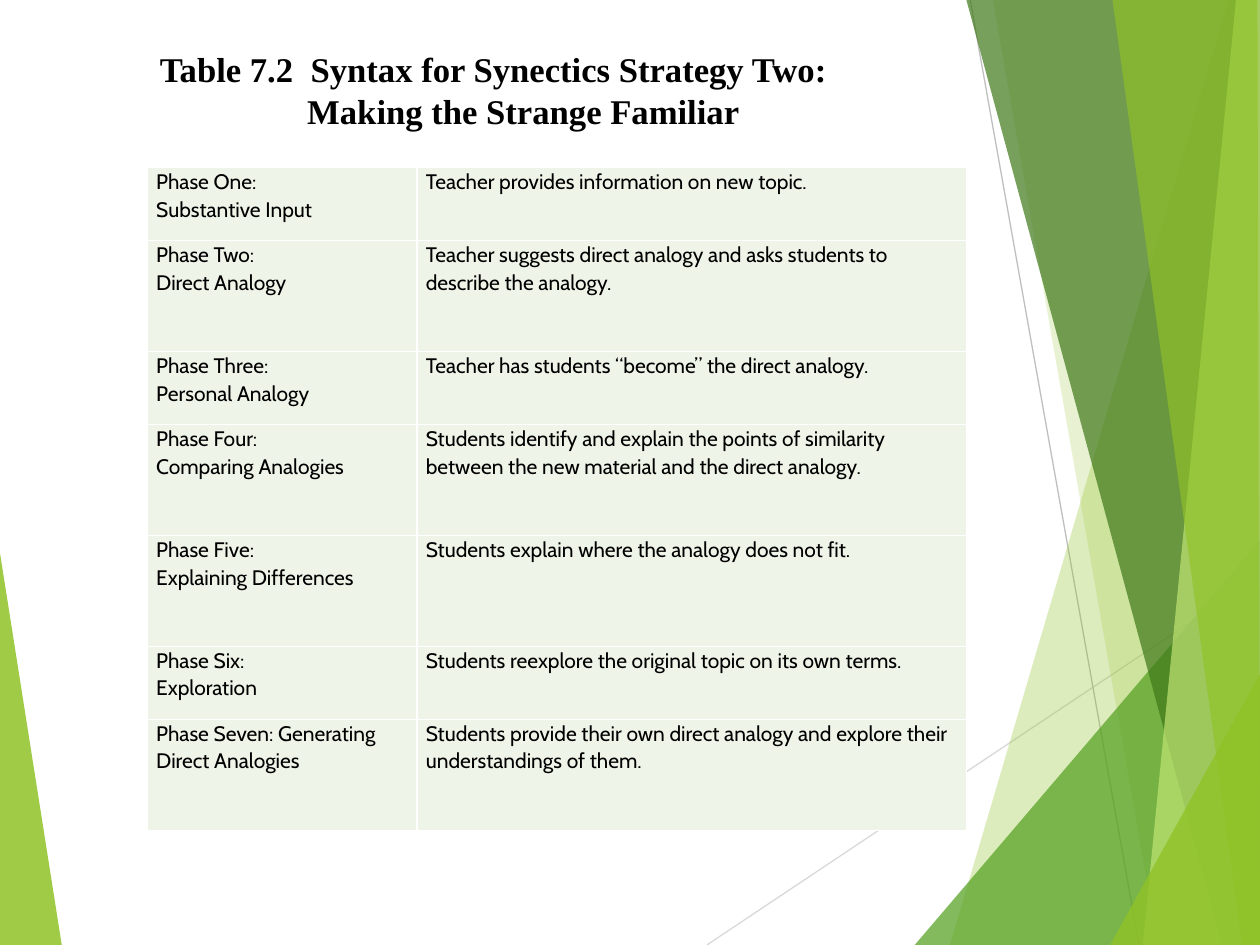
import pptx
import pptx.util
import pptx.dml.color
import pptx.enum.shapes
import pptx.enum.text
import pptx.oxml.ns
from lxml import etree

Inches = pptx.util.Inches
Pt = pptx.util.Pt
COLORS = {
    "lime": "90C226", "green": "54A021", "forest": "3F7819", "pale": "C0E474",
    "light_line": "D9D9D9", "mid_line": "BFBFBF",
    "cell": "EEF4E8", "border": "FFFFFF", "text": "000000",
}


def rgb(name):
    return pptx.dml.color.RGBColor.from_string(COLORS[name])


def add_xml(parent, tag, **attributes):
    return etree.SubElement(parent, pptx.oxml.ns.qn(tag), **attributes)


deck = pptx.Presentation()
deck.slide_width, deck.slide_height = Inches(10), Inches(7.5)
slide = deck.slides.add_slide(deck.slide_layouts[6])

# Background facets and thin lines, back to front
left_facet = ("lime", 85, [(0, 4.39), (0.49, 7.5), (0, 7.5)])
right_facets = [
    ("lime", 30, [(9.75, 0), (7.54, 7.5), (10, 7.5), (10, 0)]),
    ("lime", 20, [(7.88, 0), (9.19, 7.5), (10, 7.5), (10, 0)]),
    ("green", 72, [(7.26, 7.5), (10, 4.29), (10, 7.5)]),
    ("forest", 70, [(7.67, 0), (9.7, 7.5), (10, 7.5), (10, 0)]),
    ("pale", 70, [(9.81, 0), (9.07, 7.5), (10, 7.5), (10, 0)]),
    ("lime", 65, [(8.83, 0), (9.86, 7.5), (10, 7.5), (9.98, 0)]),
    ("lime", 80, [(8.81, 7.5), (10, 5.35), (10, 7.5)]),
]
thin_lines = [
    ("light_line", (5.61, 7.5), (10, 4.57)),
    ("mid_line", (7.7, 0), (9.04, 7.5)),
]

for color, start, end in thin_lines:
    thin_line = slide.shapes.add_connector(
        pptx.enum.shapes.MSO_CONNECTOR.STRAIGHT,
        *[Inches(value) for value in start + end])
    thin_line.line.color.rgb = rgb(color)
    thin_line.line.width = Pt(0.75)
    add_xml(thin_line._element.spPr, "a:effectLst")

for color, opacity, corners in [left_facet] + right_facets:
    points = [(Inches(x), Inches(y)) for x, y in corners]
    outline = slide.shapes.build_freeform(*points[0])
    outline.add_line_segments(points[1:], close=True)
    facet = outline.convert_to_shape()
    facet.shadow.inherit = False
    facet.line.fill.background()
    facet.fill.solid()
    facet.fill.fore_color.rgb = rgb(color)
    fill_color = facet._element.spPr.find(".//" + pptx.oxml.ns.qn("a:srgbClr"))
    add_xml(fill_color, "a:alpha", val=str(opacity * 1000))

# Title: the second line is indented under the first
title = slide.shapes.add_textbox(
    Inches(1.17), Inches(0.33), Inches(6.5), Inches(0.83)).text_frame
title.word_wrap = True
title_lines = [
    ("Table 7.2  Syntax for Synectics Strategy Two:", 0),
    ("Making the Strange Familiar", 1.17),
]
for number, (words, indent) in enumerate(title_lines):
    line = title.paragraphs[0] if number == 0 else title.add_paragraph()
    line.line_spacing = Pt(24)
    line._p.get_or_add_pPr().set("marL", str(Inches(indent)))
    run = line.add_run()
    run.text = words
    run.font.name = "Times New Roman"
    run.font.size = Pt(19.8)
    run.font.bold = True
    run.font.color.rgb = rgb("text")

# Phase table: row height, phase lines, activity
phases = [
    (0.58, ["Phase One:", "Substantive Input"],
     "Teacher provides information on new topic."),
    (0.88, ["Phase Two:", "Direct Analogy"],
     "Teacher suggests direct analogy and asks students to describe the analogy."),
    (0.58, ["Phase Three:", "Personal Analogy"],
     "Teacher has students “become” the direct analogy."),
    (0.88, ["Phase Four:", "Comparing Analogies"],
     "Students identify and explain the points of similarity between the new "
     "material and the direct analogy."),
    (0.88, ["Phase Five:", "Explaining Differences"],
     "Students explain where the analogy does not fit."),
    (0.58, ["Phase Six:", "Exploration"],
     "Students reexplore the original topic on its own terms."),
    (0.88, ["Phase Seven: Generating Direct Analogies"],
     "Students provide their own direct analogy and explore their "
     "understandings of them."),
]
syntax_table = slide.shapes.add_table(
    len(phases), 2, Inches(1.17), Inches(1.33), Inches(6.5), Inches(5.25)).table
syntax_table.first_row = False
syntax_table.horz_banding = False
for column, width in zip(syntax_table.columns, (2.14, 4.36)):
    column.width = Inches(width)

for row, (height, phase, activity) in zip(syntax_table.rows, phases):
    row.height = Inches(height)
    for cell, entries in zip(row.cells, (phase, [activity])):
        cell.margin_left = cell.margin_right = Inches(0.07)
        cell.margin_top = cell.margin_bottom = 0
        cell.vertical_anchor = pptx.enum.text.MSO_ANCHOR.TOP
        for number, words in enumerate(entries):
            frame = cell.text_frame
            entry = frame.paragraphs[0] if number == 0 else frame.add_paragraph()
            entry.line_spacing = 1.07
            entry.space_after = Pt(8 if number == len(entries) - 1 else 0)
            run = entry.add_run()
            run.text = words
            run.font.name = "Cabin"
            run.font.size = Pt(12)
            run.font.color.rgb = rgb("text")
        # Borders come before the fill in the cell properties
        properties = cell._tc.get_or_add_tcPr()
        for side in ("a:lnL", "a:lnR", "a:lnT", "a:lnB"):
            border = add_xml(properties, side, w=str(Pt(1)))
            border_fill = add_xml(border, "a:solidFill")
            add_xml(border_fill, "a:srgbClr", val=COLORS["border"])
        cell.fill.solid()
        cell.fill.fore_color.rgb = rgb("cell")

deck.save("out.pptx")
